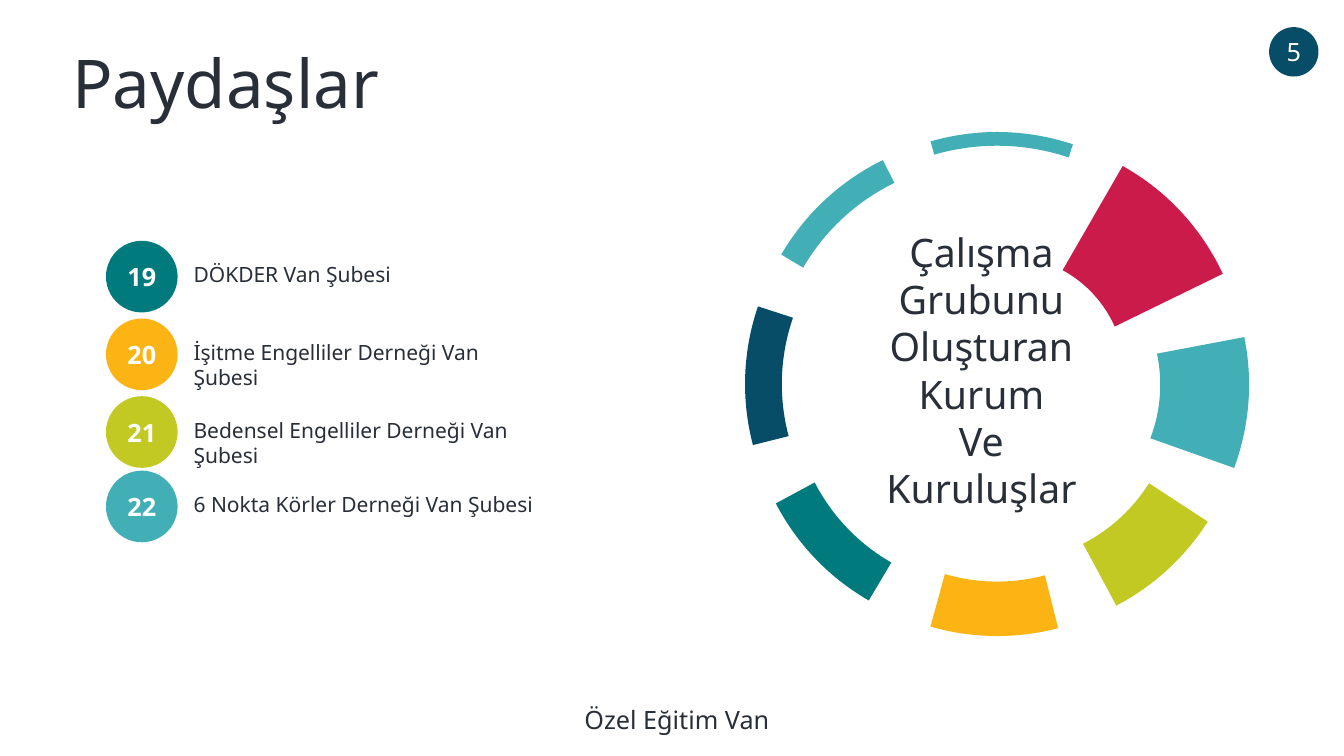
from pptx import Presentation
from pptx.dml.color import RGBColor
from pptx.enum.shapes import MSO_SHAPE
from pptx.enum.text import MSO_ANCHOR, MSO_AUTO_SIZE, PP_ALIGN
from pptx.util import Pt

OVAL, ARC = MSO_SHAPE.OVAL, MSO_SHAPE.BLOCK_ARC
LEFT, CENTER = PP_ALIGN.LEFT, PP_ALIGN.CENTER
MIDDLE, GROW = MSO_ANCHOR.MIDDLE, MSO_AUTO_SIZE.SHAPE_TO_FIT_TEXT

INK = RGBColor(0x28, 0x2F, 0x39)
WHITE = RGBColor(0xFF, 0xFF, 0xFF)
NAVY = RGBColor(0x07, 0x4D, 0x67)
AQUA = RGBColor(0x42, 0xAF, 0xB6)
TEAL = RGBColor(0x00, 0x7A, 0x7D)
AMBER = RGBColor(0xFC, 0xB4, 0x14)
LIME = RGBColor(0xC2, 0xC9, 0x23)
CRIMSON = RGBColor(0xCB, 0x1B, 0x4A)
FONT = "Noto Sans"

STAKEHOLDERS = [
    (0, "19", TEAL, "DÖKDER Van Şubesi"),
    (55.5, "20", AMBER, "İşitme Engelliler Derneği Van Şubesi"),
    (111, "21", LIME, "Bedensel Engelliler Derneği Van Şubesi"),
    (164.2, "22", AQUA, "6 Nokta Körler Derneği Van Şubesi"),
]
SEGMENTS = [
    (0, 152.81, 172.54, 0.028, AQUA),
    (315, 153.58, 172.79, 0.052, AQUA),
    (270, 153.58, 172.8, 0.075, NAVY),
    (224.7, 153.58, 172.17, 0.09, TEAL),
    (180, 153.58, 171.22, 0.111, AMBER),
    (137.2, 153.58, 170.72, 0.143, LIME),
    (93.3, 153.58, 171.73, 0.181, AQUA),
    (44, 153.58, 173.99, 0.245, CRIMSON),
]


def write(tf, lines, size, color=INK, align=LEFT, bold=False):
    """Fill a text frame with one paragraph per line."""
    for i, line in enumerate(lines):
        p = tf.add_paragraph() if i else tf.paragraphs[0]
        p.alignment = align
        r = p.add_run()
        r.text = line
        for name, value in {"name": FONT, "size": Pt(size), "bold": bold}.items():
            setattr(r.font, name, value)
        r.font.color.rgb = color


def add_text(s, box, lines, size, align=LEFT):
    """Add a wrapping text box that grows with its text."""
    tf = s.shapes.add_textbox(*map(Pt, box)).text_frame
    tf.word_wrap = True
    tf.auto_size = GROW
    write(tf, lines, size, align=align)


def add_solid(s, kind, box, color):
    """Add a flat, borderless preset shape."""
    sp = s.shapes.add_shape(kind, *map(Pt, box))
    sp.shadow.inherit = False
    sp.fill.solid()
    sp.fill.fore_color.rgb = color
    sp.line.fill.background()
    return sp


def add_badge(s, box, number, color, bold):
    """Add a circle with a number in its middle."""
    tf = add_solid(s, OVAL, box, color).text_frame
    for name in ("margin_left", "margin_right", "margin_top", "margin_bottom"):
        setattr(tf, name, 0)
    tf.word_wrap = False
    tf.vertical_anchor = MIDDLE
    write(tf, [number], 18, WHITE, CENTER, bold)


def add_stakeholders(s, left, top, width):
    """Add the numbered list of stakeholders."""
    size = 51.2
    label_left = left + 55.5
    for offset, number, color, name in STAKEHOLDERS:
        y = top + offset
        add_badge(s, (left, y, size, size), number, color, True)
        add_text(s, (label_left, y + 11.6, left + width - label_left, 25.2), [name], 15)


def add_ring(s, left, top, width, height):
    """Add the ring of arcs with its caption in the middle."""
    for rotation, start, end, thickness, color in SEGMENTS:
        sp = add_solid(s, ARC, (left, top, width, height), color)
        sp.rotation = rotation
        for i, value in enumerate((start, end, thickness)):
            sp.adjustments[i] = value
    caption = ["Çalışma Grubunu Oluşturan Kurum", "Ve Kuruluşlar"]
    add_text(s, (left + 77.3, top + 65.5, 173.5, 211), caption, 28, CENTER)


def main():
    """Build and save the slide."""
    prs = Presentation()
    prs.slide_width, prs.slide_height = Pt(960), Pt(540)
    s = prs.slides.add_slide(prs.slide_layouts[6])
    add_text(s, (36, 499.7, 895, 28.8), ["Özel Eğitim Van"], 18, CENTER)
    add_badge(s, (906.5, 19.4, 35.3, 35.3), "5", NAVY, False)
    add_ring(s, 536.9, 94.3, 350.6, 360)
    add_stakeholders(s, 75.7, 172, 323.3)
    add_text(s, (44.6, 25.9, 847.4, 67.7), ["Paydaşlar"], 48)
    prs.save("out.pptx")


if __name__ == "__main__":
    main()
